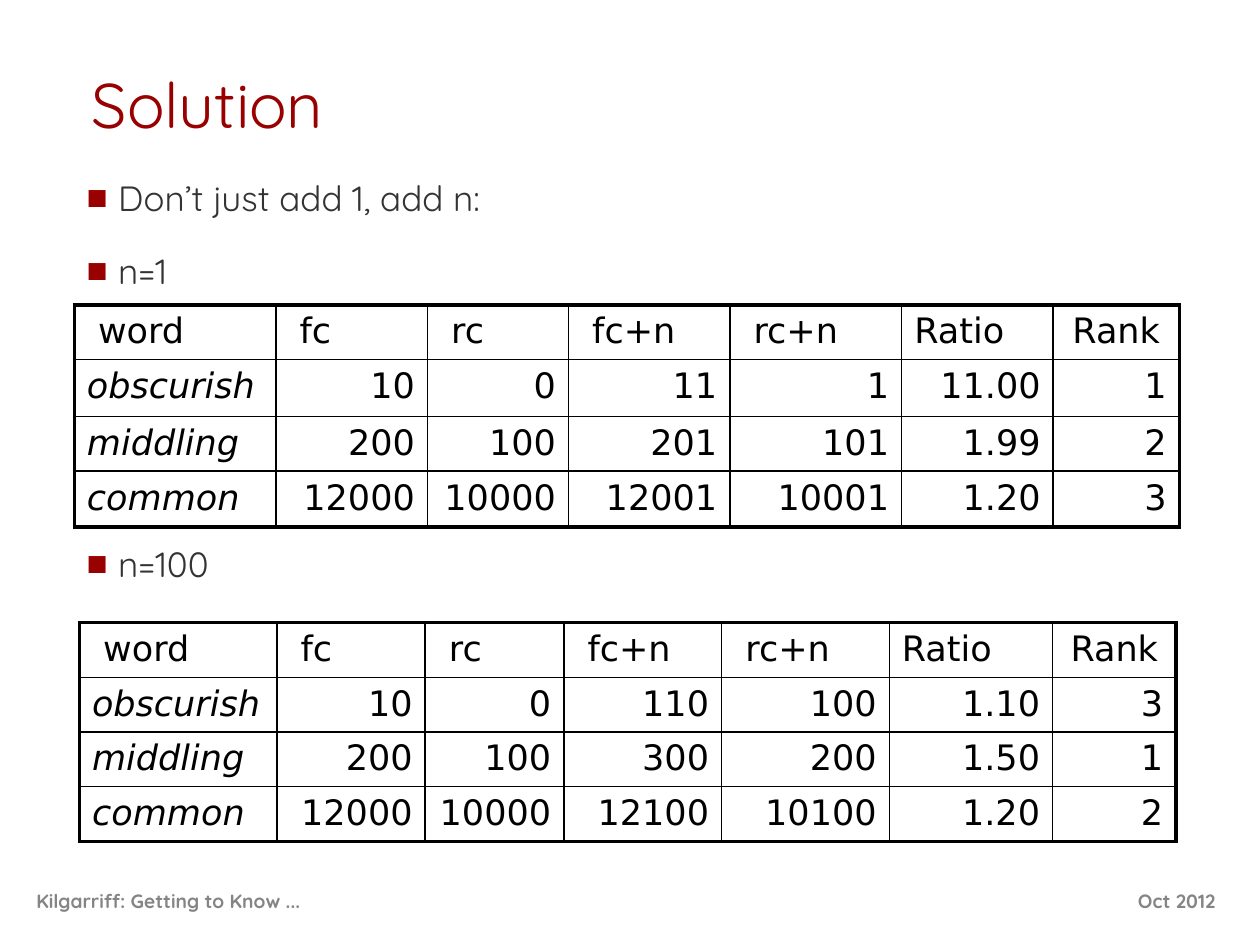
from lxml.etree import SubElement
from pptx import Presentation
from pptx.dml.color import RGBColor
from pptx.enum.text import MSO_ANCHOR as Anchor, PP_ALIGN as Align
from pptx.oxml.ns import qn
from pptx.util import Pt

SANS, MONO = "Quicksand", "DejaVu Sans"
RED, DARK, GREY, BLACK = "990000", "333333", "858585", "000000"
THIN, THICK = 1, 2.25

HEAD = [" word", " fc", " rc", " fc+n", " rc+n", "Ratio", "Rank"]
ONE = [
    HEAD,
    ["obscurish", "10", "0", "11", "1", "11.00", "1"],
    ["middling", "200", "100", "201", "101", "1.99", "2"],
    ["common", "12000", "10000", "12001", "10001", "1.20", "3"],
]
HUNDRED = [
    HEAD,
    ["obscurish", "10", "0", "110", "100", "1.10", "3"],
    ["middling", "200", "100", "300", "200", "1.50", "1"],
    ["common", "12000", "10000", "12100", "10100", "1.20", "2"],
]


def color(code):
    """Turn a hex string into a colour."""
    return RGBColor.from_string(code)


def style(par, size, face, code, bold=False, italic=False):
    """Format every run of a paragraph."""
    for run in par.runs:
        font = run.font
        font.size, font.name = Pt(size), face
        font.bold, font.italic = bold, italic
        font.color.rgb = color(code)


def add_text(slide, box, text, anchor):
    """Place a wrapping text box and return its frame."""
    frame = slide.shapes.add_textbox(*map(Pt, box)).text_frame
    frame.word_wrap = True
    frame.vertical_anchor = anchor
    frame.text = text
    return frame


def add_title(slide, box, text):
    """Place the slide title at the bottom of its box."""
    frame = add_text(slide, box, text, Anchor.BOTTOM)
    style(frame.paragraphs[0], 36, SANS, RED)


def add_footer(slide, box, text, align):
    """Place one footer label."""
    par = add_text(slide, box, text, Anchor.MIDDLE).paragraphs[0]
    par.alignment = align
    style(par, 11, SANS, GREY, bold=True)


def add_bullets(slide, box, items):
    """Place square bullets, each a pair of text and space before."""
    text = "\n".join(item for item, gap in items)
    frame = add_text(slide, box, text, Anchor.TOP)
    for par, (item, gap) in zip(frame.paragraphs, items):
        par.space_before = Pt(gap)
        style(par, 20, SANS, DARK)
        props = par._p.get_or_add_pPr()
        props.set("marL", str(Pt(18)))
        props.set("indent", str(Pt(-18)))
        tint = SubElement(props, qn("a:buClr"))
        SubElement(tint, qn("a:srgbClr"), val=RED)
        SubElement(props, qn("a:buFont"), typeface="Arial")
        SubElement(props, qn("a:buChar"), char="■")


def add_border(cell, side, width):
    """Draw one black edge of a cell."""
    props = cell._tc.get_or_add_tcPr()
    line = SubElement(props, qn("a:ln" + side), w=str(Pt(width)))
    fill = SubElement(line, qn("a:solidFill"))
    SubElement(fill, qn("a:srgbClr"), val=BLACK)


def add_grid(slide, left, top, cols, rows, data):
    """Place a word table with a thick frame and thin inner lines."""
    box = left, top, sum(cols), sum(rows)
    shape = slide.shapes.add_table(len(rows), len(cols), *map(Pt, box))
    table = shape.table
    table.first_row = table.horz_banding = False
    for col, width in zip(table.columns, cols):
        col.width = Pt(width)
    for row, height in zip(table.rows, rows):
        row.height = Pt(height)
    for r, words in enumerate(data):
        for c, word in enumerate(words):
            cell = table.cell(r, c)
            cell.text = word
            par = cell.text_frame.paragraphs[0]
            if r and c:
                par.alignment = Align.RIGHT
            elif word == "Rank":
                par.alignment = Align.CENTER
            style(par, 20, MONO, BLACK, italic=r > 0 and c == 0)
            outer = {"L": c == 0, "R": c == len(cols) - 1,
                     "T": r == 0, "B": r == len(rows) - 1}
            for side, edge in outer.items():
                add_border(cell, side, THICK if edge else THIN)
            cell.fill.background()


def main():
    """Build and save the slide."""
    deck = Presentation()
    deck.slide_width, deck.slide_height = Pt(720), Pt(540)
    slide = deck.slides.add_slide(deck.slide_layouts[6])
    add_footer(slide, (566.6, 500.4, 138.2, 28.8), "Oct 2012 ", Align.RIGHT)
    add_footer(slide, (13.7, 500.4, 473, 28.8),
               "Kilgarriff: Getting to Know ...", Align.LEFT)
    add_title(slide, (45.4, 0, 630, 84.2), "Solution")
    add_bullets(slide, (42.5, 97.2, 561.6, 361.4),
                [("Don’t just add 1, add n:", 18), ("n=1", 18), ("n=100", 143)])
    add_grid(slide, 42.5, 174.2, [115.2, 86.6, 80.6, 92.2, 98.2, 86.6, 72],
             [31, 32.6, 31.2, 32], ONE)
    add_grid(slide, 45.4, 355.8, [112.8, 84.8, 79.2, 90.2, 95.8, 93.4, 70.4],
             [31.1] * 4, HUNDRED)
    deck.save("out.pptx")


if __name__ == "__main__":
    main()
